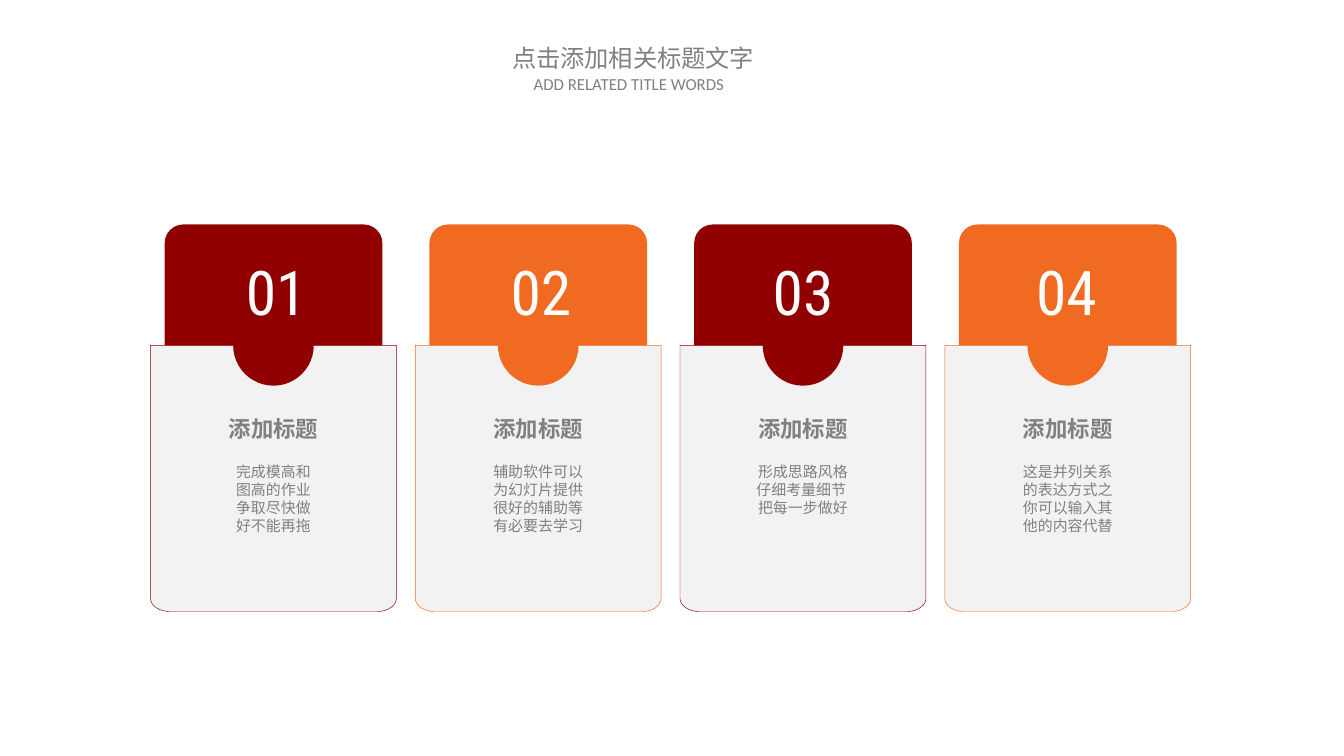
import dataclasses
import math

import pptx
import pptx.dml.color
import pptx.enum.shapes
import pptx.enum.text
import pptx.oxml.ns
import pptx.util
from lxml import etree

CELL = 0.1
COLUMNS, ROWS = 100, 56.25
FIRST_CENTER, PITCH = 20.35, 19.7
SHAPES = pptx.enum.shapes.MSO_SHAPE
CENTER = pptx.enum.text.PP_ALIGN.CENTER
LEFT = pptx.enum.text.PP_ALIGN.LEFT


@dataclasses.dataclass(frozen=True)
class Style:
    size: float
    font: str
    color: str
    bold: bool = False
    leading: float = 0


@dataclasses.dataclass(frozen=True)
class Theme:
    accents: tuple = ("900000", "F16A22")
    pocket: str = "F2F2F2"
    outline: float = 0.25
    title: Style = Style(13, "Noto Sans CJK SC", "808080", leading=1.2)
    subtitle: Style = Style(9, "Calibri", "808080")
    number: Style = Style(33, "Roboto Condensed", "FFFFFF")
    heading: Style = Style(12, "Noto Sans CJK SC", "808080", True, 1.2)
    body: Style = Style(8, "Noto Sans CJK SC", "808080", leading=1.2)


THEME = Theme()
CARDS = (
    (20.55, "添加标题", "完成模高和\n图高的作业\n争取尽快做\n好不能再拖"),
    (40.25, "添加标题", "辅助软件可以\n为幻灯片提供\n很好的辅助等\n有必要去学习"),
    (59.75, "添加标题", "形成思路风格\n仔细考量细节 \n把每一步做好"),
    (79.35, "添加标题", "这是并列关系\n的表达方式之\n你可以输入其\n他的内容代替"),
)


def cells(count):
    return pptx.util.Inches(count * CELL)


def box(center, top, width, height):
    return [cells(value) for value in (center - width / 2, top, width, height)]


def rgb(color):
    return pptx.dml.color.RGBColor.from_string(color)


def paint(shape, fill, line=None):
    shape.shadow.inherit = False
    shape.fill.solid()
    shape.fill.fore_color.rgb = rgb(fill)
    if line:
        shape.line.color.rgb = rgb(line)
        shape.line.width = pptx.util.Pt(THEME.outline)
    else:
        shape.line.fill.background()


def write(shape, text, style, alignment=CENTER, wrap=True, inset=0.07):
    frame = shape.text_frame
    frame.text = text
    frame.word_wrap = wrap
    frame.auto_size = pptx.enum.text.MSO_AUTO_SIZE.NONE
    frame.vertical_anchor = pptx.enum.text.MSO_ANCHOR.TOP
    frame.margin_left = frame.margin_right = pptx.util.Inches(inset)
    frame.margin_top = frame.margin_bottom = pptx.util.Inches(0.04)
    for paragraph in frame.paragraphs:
        paragraph.alignment = alignment
        if style.leading:
            paragraph.line_spacing = pptx.util.Pt(style.size * style.leading)
        for run in paragraph.runs:
            run.font.size = pptx.util.Pt(style.size)
            run.font.bold = style.bold
            run.font.color.rgb = rgb(style.color)
            run.font.name = style.font
            properties = run.font._element
            etree.SubElement(properties, pptx.oxml.ns.qn("a:ea"), typeface=style.font)


def add_label(shapes, place, text, style, **options):
    write(shapes.add_textbox(*place), text, style, **options)


def add_solid(shapes, kind, place, color):
    shape = shapes.add_shape(kind, *place)
    paint(shape, color)
    return shape


def corner(x, y, radius_x, radius_y, start, steps=12):
    angles = [math.radians(start + 90 * step / steps) for step in range(steps + 1)]
    return [(x + radius_x * math.cos(a), y + radius_y * math.sin(a)) for a in angles]


def add_pocket(shapes, center, color):
    left, right, top, bottom = center - 9.15, center + 9.15, 25.7, 45.5
    radius_x, radius_y = 1.4, 1
    points = [(right, top)]
    points += corner(right - radius_x, bottom - radius_y, radius_x, radius_y, 0)
    points += corner(left + radius_x, bottom - radius_y, radius_x, radius_y, 90)
    builder = shapes.build_freeform(cells(left), cells(top))
    builder.add_line_segments([(cells(x), cells(y)) for x, y in points], close=True)
    paint(builder.convert_to_shape(), THEME.pocket, color)


def add_card(slide, index, number_center, heading, body):
    shapes = slide.shapes.add_group_shape().shapes
    center = FIRST_CENTER + index * PITCH
    color = THEME.accents[index % len(THEME.accents)]
    tab = add_solid(shapes, SHAPES.ROUNDED_RECTANGLE, box(center, 16.7, 16.2, 14.9), color)
    tab.adjustments[0] = 0.093
    add_pocket(shapes, center, color)
    add_solid(shapes, SHAPES.OVAL, box(center, 22.7, 6, 6), color)
    add_label(shapes, box(number_center, 18.5, 8.8, 6.4), f"{index + 1:02}", THEME.number)
    add_label(shapes, box(center, 30.5, 11, 2.8), heading, THEME.heading)
    body_height = 0.8 + 1.33 * len(body.splitlines())
    add_label(shapes, box(center, 34, 13.2, body_height), body, THEME.body)


def add_header(slide):
    title = slide.shapes.title
    title.left, title.top, title.width, title.height = box(47.15, 2.8, 19.7, 2.9)
    options = {"alignment": LEFT, "wrap": False, "inset": 0.08}
    write(title, "点击添加相关标题文字", THEME.title, **options)
    add_label(slide.shapes, box(46.85, 5.1, 15.9, 2.3), "ADD RELATED TITLE WORDS",
              THEME.subtitle, **options)


def main():
    presentation = pptx.Presentation()
    presentation.slide_width = cells(COLUMNS)
    presentation.slide_height = cells(ROWS)
    slide = presentation.slides.add_slide(presentation.slide_layouts[5])
    add_header(slide)
    for index, card in enumerate(CARDS):
        add_card(slide, index, *card)
    presentation.save("out.pptx")


if __name__ == "__main__":
    main()
